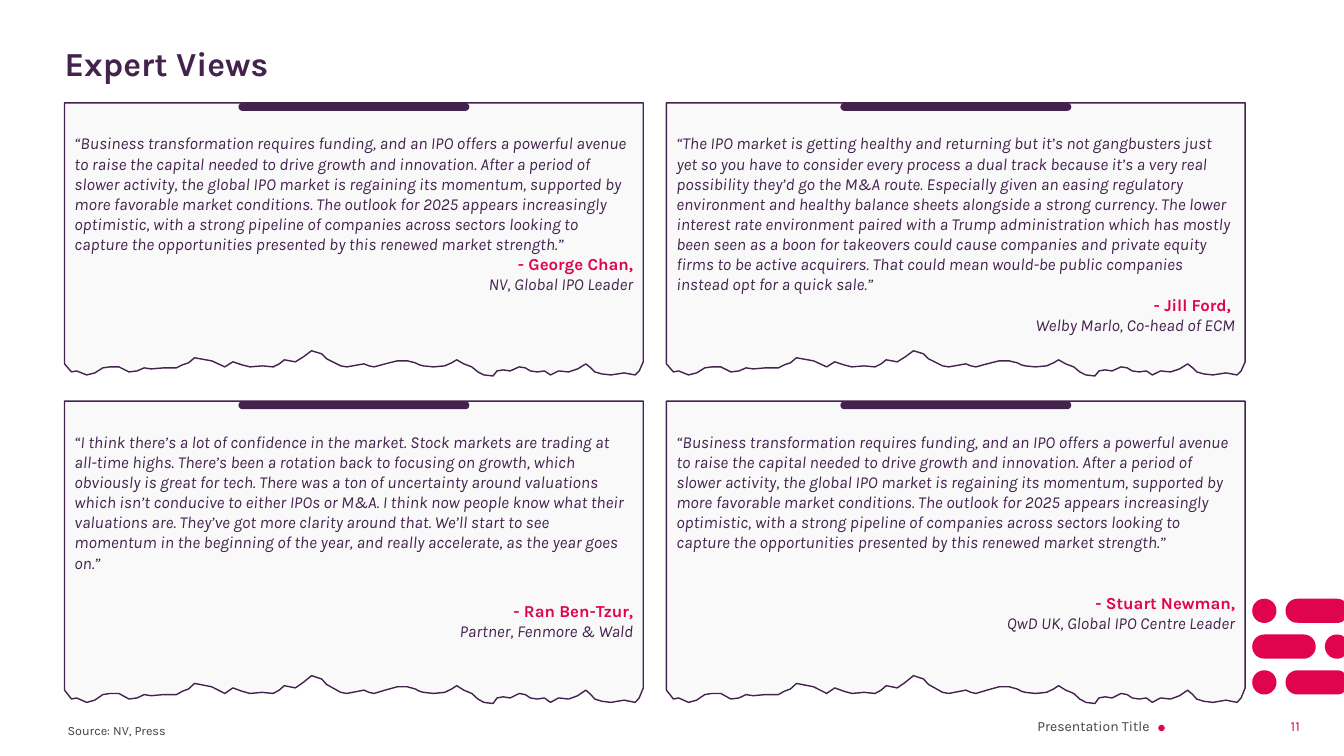
import math

import pptx
import pptx.dml.color
import pptx.enum.shapes
import pptx.enum.text
import pptx.util

Inches = pptx.util.Inches
Pt = pptx.util.Pt
ALIGN = pptx.enum.text.PP_ALIGN
ANCHOR = pptx.enum.text.MSO_ANCHOR

PURPLE, PINK, PAPER, GREY = "43224D", "E0044E", "F9F9F9", "414042"
SLIDE_WIDTH, SLIDE_HEIGHT = 13.33, 7.5

TRANSFORMATION = (
    "“Business transformation requires funding, and an IPO offers a powerful avenue to raise "
    "the capital needed to drive growth and innovation. After a period of slower activity, the "
    "global IPO market is regaining its momentum, supported by more favorable market conditions. "
    "The outlook for 2025 appears increasingly optimistic, with a strong pipeline of companies "
    "across sectors looking to capture the opportunities presented by this renewed market strength.”"
)
DUAL_TRACK = (
    "“The IPO market is getting healthy and returning but it’s not gangbusters just yet so you "
    "have to consider every process a dual track because it’s a very real possibility they’d go "
    "the M&A route. Especially given an easing regulatory environment and healthy balance sheets "
    "alongside a strong currency. The lower interest rate environment paired with a Trump "
    "administration which has mostly been seen as a boon for takeovers could cause companies and "
    "private equity firms to be active acquirers. That could mean would-be public companies "
    "instead opt for a quick sale.”"
)
CONFIDENCE = (
    "“I think there’s a lot of confidence in the market. Stock markets are trading at all-time "
    "highs. There’s been a rotation back to focusing on growth, which obviously is great for tech. "
    "There was a ton of uncertainty around valuations which isn’t conducive to either IPOs or M&A. "
    "I think now people know what their valuations are. They’ve got more clarity around that. "
    "We’ll start to see momentum in the beginning of the year, and really accelerate, as the year "
    "goes on.”"
)
# quote, expert, role, points of space above the expert
VIEWS = [
    (TRANSFORMATION, "- George Chan,", "NV, Global IPO Leader", 0),
    (DUAL_TRACK, "- Jill Ford, ", "Welby Marlo, Co-head of ECM", 0),
    (CONFIDENCE, "- Ran Ben-Tzur,", "Partner, Fenmore & Wald", 20),
    (TRANSFORMATION, "- Stuart Newman,", "QwD UK, Global IPO Centre Leader", 29),
]

CARD_LEFTS = (0.64, 6.61)
CARD_ROWS = ((1.02, 2.71), (3.98, 3.0))  # top, height
CARD_WIDTH = 5.74
TAB_WIDTH, TAB_HEIGHT = 2.29, 0.08

# Torn lower edge, left to right, measured from the corner of a card 2.71 high
TORN_HEIGHT = 2.71
TORN_EDGE = [
    (0, 2.59), (0.07, 2.67), (0.12, 2.66), (0.22, 2.7), (0.3, 2.68), (0.38, 2.63),
    (0.45, 2.62), (0.54, 2.62), (0.64, 2.67), (0.72, 2.66), (0.79, 2.63), (0.86, 2.64),
    (0.98, 2.63), (1.11, 2.63), (1.17, 2.6), (1.23, 2.58), (1.29, 2.53), (1.46, 2.56),
    (1.59, 2.62), (1.67, 2.57), (1.76, 2.6), (1.84, 2.62), (1.96, 2.61), (2.07, 2.62),
    (2.13, 2.59), (2.18, 2.55), (2.29, 2.57), (2.37, 2.52), (2.45, 2.46), (2.55, 2.49),
    (2.6, 2.54), (2.68, 2.58), (2.74, 2.61), (2.8, 2.62), (2.97, 2.59), (3.02, 2.61),
    (3.07, 2.62), (3.18, 2.59), (3.3, 2.56), (3.4, 2.56), (3.48, 2.58), (3.52, 2.6),
    (3.56, 2.61), (3.66, 2.62), (3.77, 2.61), (3.84, 2.58), (3.89, 2.55), (3.96, 2.59),
    (4.04, 2.62), (4.1, 2.67), (4.16, 2.7), (4.25, 2.71), (4.29, 2.66), (4.35, 2.65),
    (4.42, 2.66), (4.51, 2.62), (4.57, 2.63), (4.62, 2.66), (4.69, 2.67), (4.76, 2.66),
    (4.82, 2.7), (4.9, 2.66), (5, 2.67), (5.09, 2.64), (5.17, 2.59), (5.22, 2.63),
    (5.26, 2.67), (5.33, 2.69), (5.42, 2.7), (5.55, 2.68), (5.66, 2.7), (5.7, 2.66),
    (5.74, 2.57),
]

# Dots and pills at the right edge, row by row: left, width
DOT = 0.24
PILL = 0.63
PATTERN = [
    [(12.42, DOT), (12.75, PILL)],
    [(12.42, PILL), (13.14, DOT)],
    [(12.42, DOT), (12.75, PILL)],
]
PATTERN_TOP, PATTERN_STEP = 5.94, 0.355


def rgb(hex_colour):
    return pptx.dml.color.RGBColor.from_string(hex_colour)


def paint(shape, fill, line=None):
    shape.shadow.inherit = False
    shape.fill.solid()
    shape.fill.fore_color.rgb = rgb(fill)
    if line:
        shape.line.color.rgb = rgb(line)
        shape.line.width = Pt(1)
    else:
        shape.line.fill.background()


def outline(slide, points):
    """Closed freeform through points given in inches."""
    corners = [(Inches(x), Inches(y)) for x, y in points]
    builder = slide.shapes.build_freeform(*corners[0])
    builder.add_line_segments(corners[1:], close=True)
    return builder.convert_to_shape()


def frame_text(shape, insets, anchor):
    frame = shape.text_frame
    frame.word_wrap = True
    frame.vertical_anchor = anchor
    (frame.margin_left, frame.margin_top,
     frame.margin_right, frame.margin_bottom) = [Inches(inset) for inset in insets]
    return frame


def write(paragraph, text, size, colour, align=ALIGN.LEFT, bold=False, italic=False, face="Karla"):
    paragraph.text = text
    paragraph.alignment = align
    font = paragraph.font
    font.name, font.size, font.bold, font.italic = face, Pt(size), bold, italic
    font.color.rgb = rgb(colour)


def add_label(slide, box, insets, *style, **options):
    label = slide.shapes.add_textbox(*[Inches(length) for length in box])
    write(frame_text(label, insets, ANCHOR.MIDDLE).paragraphs[0], *style, **options)


def add_pattern(slide):
    radius = DOT / 2
    for row, marks in enumerate(PATTERN):
        middle = PATTERN_TOP + row * PATTERN_STEP + radius
        for left, width in marks:
            points = []
            for degrees in range(-90, 271, 10):
                centre = left + (width - radius if degrees <= 90 else radius)
                angle = math.radians(degrees)
                x = min(centre + radius * math.cos(angle), SLIDE_WIDTH)
                points.append((x, middle + radius * math.sin(angle)))
            paint(outline(slide, points), PINK)


def add_card(slide, left, top, height, view):
    quote, expert, role, gap = view
    stretch = height / TORN_HEIGHT
    edge = [(left + x, top + y * stretch) for x, y in TORN_EDGE]
    card = outline(slide, [(left + CARD_WIDTH, top), (left, top)] + edge)
    paint(card, PAPER, PURPLE)
    frame = frame_text(card, (0.1, 0.3, 0.1, 0.05), ANCHOR.TOP)
    write(frame.paragraphs[0], quote, 12, PURPLE, italic=True)
    signature = frame.add_paragraph()
    write(signature, expert, 12, PINK, ALIGN.RIGHT, bold=True)
    signature.space_before = Pt(gap)
    write(frame.add_paragraph(), role, 12, PURPLE, ALIGN.RIGHT, italic=True)

    tab = slide.shapes.add_shape(
        pptx.enum.shapes.MSO_SHAPE.ROUNDED_RECTANGLE,
        Inches(left + (CARD_WIDTH - TAB_WIDTH) / 2), Inches(top),
        Inches(TAB_WIDTH), Inches(TAB_HEIGHT))
    tab.adjustments[0] = 0.5
    paint(tab, PURPLE)


def main():
    deck = pptx.Presentation()
    deck.slide_width, deck.slide_height = Inches(SLIDE_WIDTH), Inches(SLIDE_HEIGHT)
    slide = deck.slides.add_slide(deck.slide_layouts[5])

    title = slide.shapes.title
    title.left, title.top, title.width, title.height = [
        Inches(length) for length in (0.64, 0.43, 11.71, 0.44)]
    heading = frame_text(title, (0, 0.05, 0, 0.05), ANCHOR.MIDDLE)
    heading.auto_size = pptx.enum.text.MSO_AUTO_SIZE.NONE
    write(heading.paragraphs[0], "Expert Views", 24, PURPLE, bold=True)
    heading.paragraphs[0].line_spacing = 0.9

    add_pattern(slide)
    places = [(left, top, height) for top, height in CARD_ROWS for left in CARD_LEFTS]
    for place, view in zip(places, VIEWS):
        add_card(slide, *place, view)

    add_label(slide, (0.62, 7.16, 9.61, 0.18), (0.05, 0.05, 0.1, 0.05), "Source: NV, Press", 9, GREY)
    add_label(slide, (7.03, 7.08, 4.37, 0.25), (0, 0, 0, 0), "Presentation Title", 10, GREY, ALIGN.RIGHT)
    add_label(slide, (11.48, 7.09, 0.09, 0.25), (0, 0, 0, 0), "●", 10, PINK, face="Calibri")
    add_label(slide, (12.57, 7.08, 0.42, 0.25), (0.1, 0, 0.1, 0), "11", 10, PINK, ALIGN.RIGHT)
    deck.save("out.pptx")


if __name__ == "__main__":
    main()
